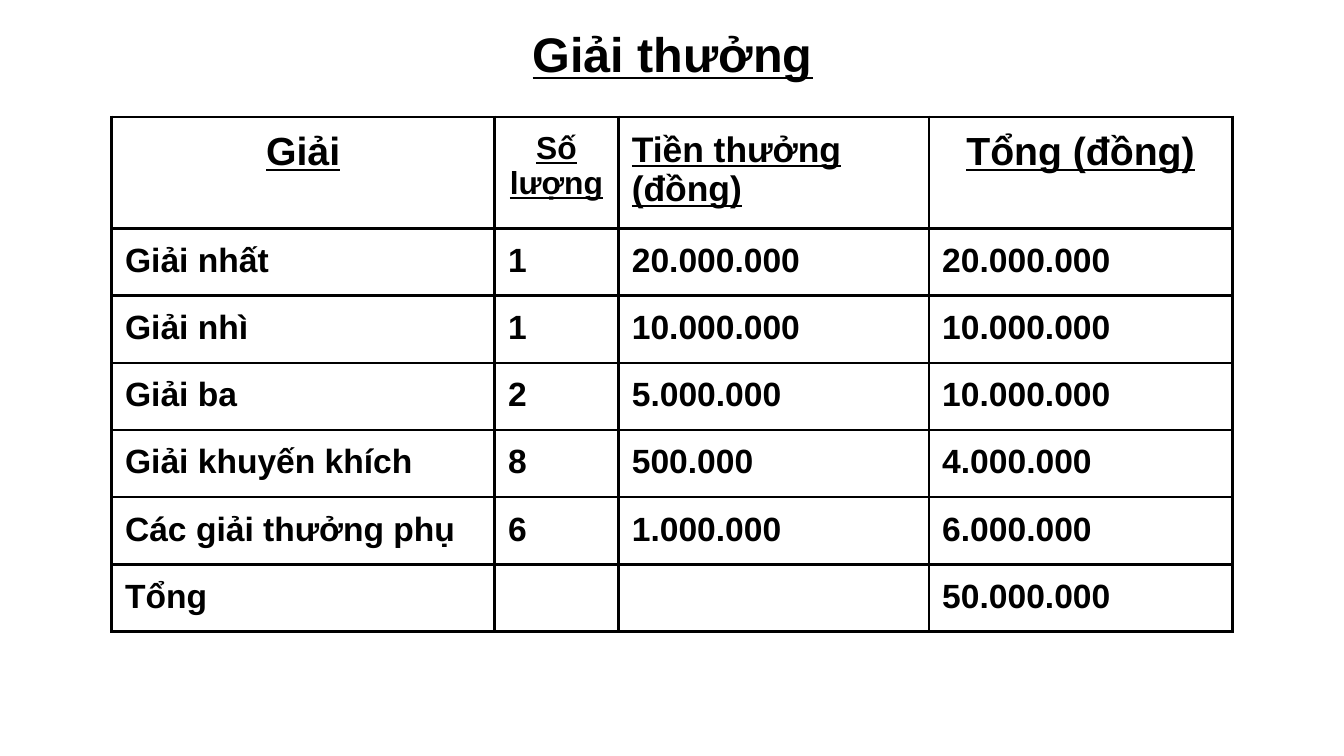
from lxml import etree
from pptx import Presentation
from pptx import util as u
from pptx.dml.color import RGBColor
from pptx.enum import text
from pptx.oxml import ns

BLACK = RGBColor(0, 0, 0)
WHITE = RGBColor(255, 255, 255)
LEFT, CENTER = text.PP_ALIGN.LEFT, text.PP_ALIGN.CENTER
COLUMN_WIDTHS = (205.2, 66.3, 166.3, 162.7)
HEADER_HEIGHT, ROW_HEIGHT = 59.76, 36
HEADERS = (
    ("Giải", 21, CENTER),
    ("Số lượng", 17, CENTER),
    ("Tiền thưởng (đồng)", 19, LEFT),
    ("Tổng (đồng)", 21, CENTER),
)
PRIZES = (
    ("Giải nhất", "1", "20.000.000", "20.000.000"),
    ("Giải nhì", "1", "10.000.000", "10.000.000"),
    ("Giải ba", "2", "5.000.000", "10.000.000"),
    ("Giải khuyến khích", "8", "500.000", "4.000.000"),
    ("Các giải thưởng phụ", "6", "1.000.000", "6.000.000"),
    ("Tổng", "", "", "50.000.000"),
)


def apply(target, values):
    for name, value in values.items():
        setattr(target, name, value)


class PrizeSlide:
    font = {"name": "Arial", "bold": True}
    margins = {f"margin_{side}": u.Pt(7.2) for side in ("left", "top", "right", "bottom")}
    border_width = u.Pt(1.5)

    def __init__(self, presentation):
        self.slide = presentation.slides.add_slide(presentation.slide_layouts[5])

    def label(self, paragraph, words, size, align=LEFT, underline=False):
        paragraph.alignment = align
        font = paragraph.font
        if words:
            run = paragraph.add_run()
            run.text = words
            font = run.font
        apply(font, {**self.font, "size": u.Pt(size), "underline": underline})
        font.color.rgb = BLACK

    def title(self, words, left, top, width, height):
        shape = self.slide.shapes.title
        apply(shape, {"left": u.Pt(left), "top": u.Pt(top),
                      "width": u.Pt(width), "height": u.Pt(height)})
        apply(shape.text_frame, {**self.margins, "margin_bottom": u.Pt(6),
                                 "word_wrap": True,
                                 "auto_size": text.MSO_AUTO_SIZE.NONE,
                                 "vertical_anchor": text.MSO_ANCHOR.BOTTOM})
        self.label(shape.text_frame.paragraphs[0], words, 26, CENTER, True)

    def border(self, cell):
        properties = cell._tc.get_or_add_tcPr()
        for index, edge in enumerate(("lnL", "lnR", "lnT", "lnB")):
            line = etree.Element(ns.qn(f"a:{edge}"), w=str(self.border_width))
            fill = etree.SubElement(line, ns.qn("a:solidFill"))
            etree.SubElement(fill, ns.qn("a:srgbClr"), val=str(BLACK))
            properties.insert(index, line)

    def cell(self, cell, words, size, align=LEFT, underline=False):
        apply(cell, {**self.margins, "vertical_anchor": text.MSO_ANCHOR.TOP})
        cell.fill.solid()
        cell.fill.fore_color.rgb = WHITE
        self.border(cell)
        self.label(cell.text_frame.paragraphs[0], words, size, align, underline)

    def table(self, left, top):
        heights = [HEADER_HEIGHT] + [ROW_HEIGHT] * len(PRIZES)
        frame = self.slide.shapes.add_table(
            len(heights), len(COLUMN_WIDTHS), u.Pt(left), u.Pt(top),
            u.Pt(sum(COLUMN_WIDTHS)), u.Pt(sum(heights)))
        table = frame.table
        for column, width in zip(table.columns, COLUMN_WIDTHS):
            column.width = u.Pt(width)
        for row, height in zip(table.rows, heights):
            row.height = u.Pt(height)
        for column, (words, size, align) in enumerate(HEADERS):
            self.cell(table.cell(0, column), words, size, align, True)
        for row, prize in enumerate(PRIZES, 1):
            for column, words in enumerate(prize):
                self.cell(table.cell(row, column), words, 18)


def main():
    presentation = Presentation()
    apply(presentation, {"slide_width": u.Pt(720), "slide_height": u.Pt(405)})
    prizes = PrizeSlide(presentation)
    prizes.title("Giải thưởng", 113.8, 4.3, 493.2, 46)
    prizes.table(59.8, 62.6)
    presentation.save("out.pptx")


if __name__ == "__main__":
    main()
